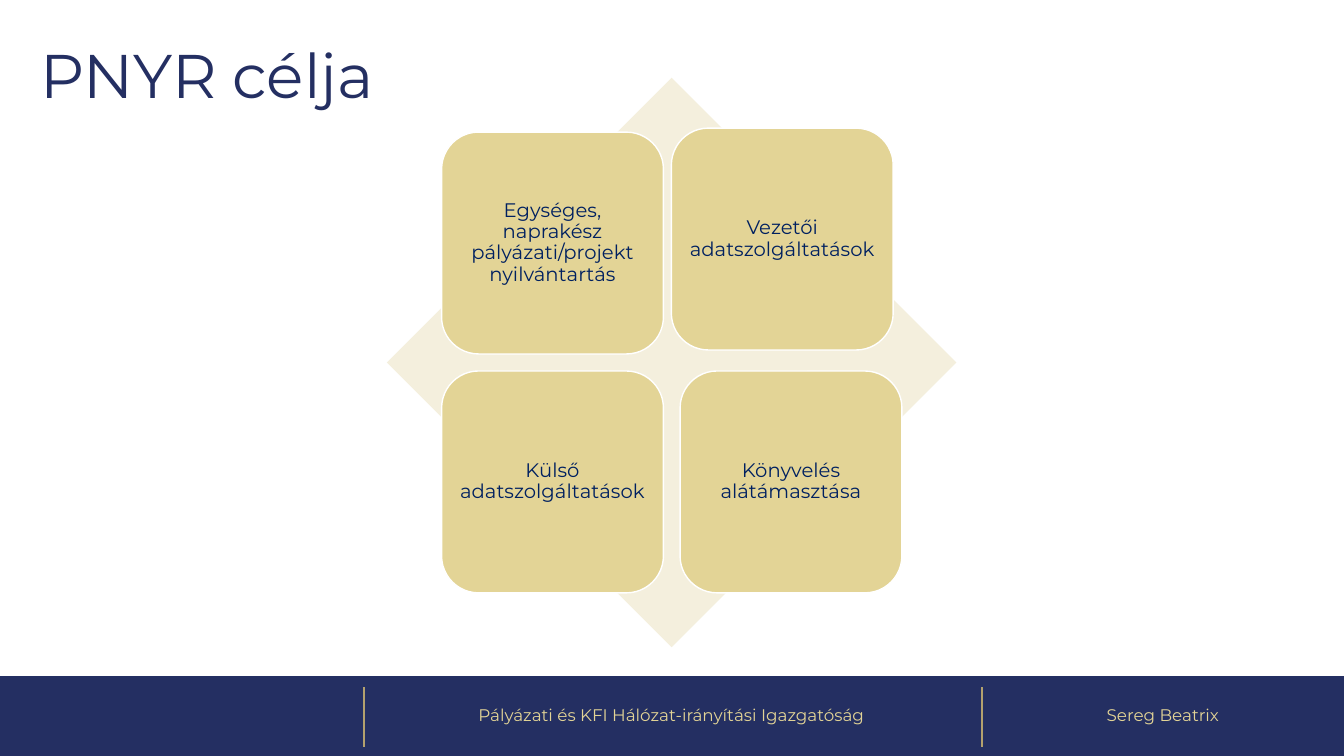
import pptx
import pptx.util
import pptx.dml.color
import pptx.enum.shapes
import pptx.enum.text
from dataclasses import dataclass
from lxml import etree
from pptx.util import Cm

SHAPE = pptx.enum.shapes.MSO_SHAPE
ALIGN = pptx.enum.text.PP_ALIGN
A_NS = "{http://schemas.openxmlformats.org/drawingml/2006/main}"


@dataclass(frozen=True)
class Theme:
    font: str = "Montserrat"
    navy: str = "242F62"
    ink: str = "002060"
    gold: str = "E3D496"
    cream: str = "F4EFDD"
    bronze: str = "B3A16E"
    white: str = "FFFFFF"
    title_size: int = 44
    card_size: int = 14
    footer_size: int = 12


def rgb(code):
    return pptx.dml.color.RGBColor.from_string(code)


class SlideBuilder:
    def __init__(self, slide, theme):
        self.slide = slide
        self.theme = theme

    def set_text(self, frame, text, size, color, align, space_after=0):
        frame.word_wrap = True
        frame.auto_size = pptx.enum.text.MSO_AUTO_SIZE.NONE
        frame.vertical_anchor = pptx.enum.text.MSO_ANCHOR.MIDDLE
        paragraph = frame.paragraphs[0]
        properties = paragraph._p.get_or_add_pPr()
        properties.set("marL", "0")
        properties.set("indent", "0")
        etree.SubElement(properties, A_NS + "buNone")
        paragraph.alignment = align
        paragraph.line_spacing = 0.9
        paragraph.space_before = pptx.util.Pt(0)
        paragraph.space_after = pptx.util.Pt(space_after)
        run = paragraph.add_run()
        run.text = text
        run.font.name = self.theme.font
        run.font.size = pptx.util.Pt(size)
        run.font.color.rgb = rgb(color)

    def placeholder(self, index, box, text, size, color, align, space_after=0):
        holder = self.slide.placeholders[index]
        holder.left, holder.top, holder.width, holder.height = map(Cm, box)
        # Bring the placeholder in front of the shapes drawn so far
        holder._element.getparent().append(holder._element)
        self.set_text(holder.text_frame, text, size, color, align, space_after)

    def shape(self, kind, box, fill, outline=None):
        shape = self.slide.shapes.add_shape(kind, *map(Cm, box))
        shape.shadow.inherit = False
        shape.fill.solid()
        shape.fill.fore_color.rgb = rgb(fill)
        if outline:
            shape.line.color.rgb = rgb(outline)
            shape.line.width = pptx.util.Pt(1)
        else:
            shape.line.fill.background()
        return shape

    def divider(self, x, top, bottom):
        line = self.slide.shapes.add_connector(
            pptx.enum.shapes.MSO_CONNECTOR.STRAIGHT, Cm(x), Cm(top), Cm(x), Cm(bottom))
        line.line.color.rgb = rgb(self.theme.bronze)
        line.line.width = pptx.util.Pt(1.5)
        etree.SubElement(line._element.spPr, A_NS + "effectLst")

    def card(self, left, top, side, text):
        card = self.shape(SHAPE.ROUNDED_RECTANGLE, (left, top, side, side),
                          self.theme.gold, self.theme.white)
        frame = card.text_frame
        frame.margin_left = frame.margin_right = Cm(0.15)
        frame.margin_top = frame.margin_bottom = Cm(0.15)
        self.set_text(frame, text, self.theme.card_size, self.theme.ink, ALIGN.CENTER, 4.9)


def main():
    presentation = pptx.Presentation()
    presentation.slide_width, presentation.slide_height = Cm(33.87), Cm(19.05)
    theme = Theme()
    slide = presentation.slides.add_slide(presentation.slide_layouts[3])
    builder = SlideBuilder(slide, theme)

    # Footer band with its dividers
    band_top, band_height = 17.04, 2.01
    builder.shape(SHAPE.RECTANGLE, (0, band_top, 33.87, band_height), theme.navy)
    for divider_x in (9.17, 24.74):
        builder.divider(divider_x, 17.32, 18.82)

    # Title
    builder.placeholder(0, (0.76, 0.13, 29.21, 3.68), "PNYR célja",
                        theme.title_size, theme.navy, ALIGN.LEFT)

    # Footer texts
    footers = [
        (1, 9.12, 15.6, "Pályázati és KFI Hálózat-irányítási Igazgatóság"),
        (2, 24.74, 9.13, "Sereg Beatrix"),
    ]
    for index, left, width, text in footers:
        builder.placeholder(index, (left, band_top, width, band_height), text,
                            theme.footer_size, theme.gold, ALIGN.CENTER, 6)

    # Diamond with the four goals
    builder.shape(SHAPE.DIAMOND, (9.75, 1.96, 14.35, 14.35), theme.cream)
    goals = [
        (11.13, 3.33, "Egységes, naprakész pályázati/projekt nyilvántartás"),
        (16.92, 3.23, "Vezetői adatszolgáltatások"),
        (11.13, 9.35, "Külső adatszolgáltatások"),
        (17.14, 9.35, "Könyvelés alátámasztása"),
    ]
    for left, top, text in goals:
        builder.card(left, top, 5.59, text)

    presentation.save("out.pptx")


if __name__ == "__main__":
    main()
